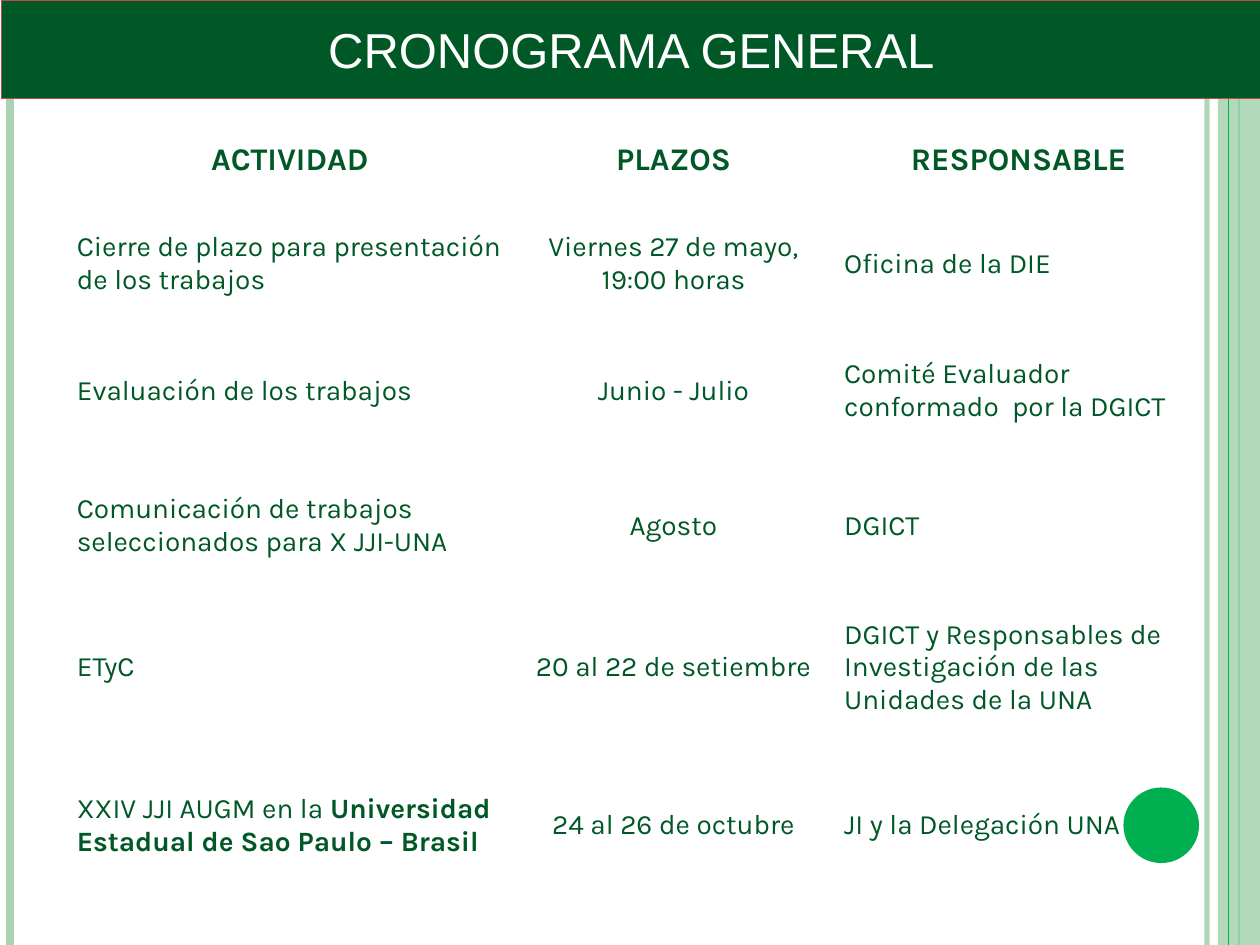
import lxml.etree
import pptx
import pptx.dml.color
import pptx.enum.shapes
import pptx.enum.text
import pptx.oxml.ns
import pptx.util

Pt = pptx.util.Pt
RGBColor = pptx.dml.color.RGBColor
MSO_SHAPE = pptx.enum.shapes.MSO_SHAPE
PP_ALIGN = pptx.enum.text.PP_ALIGN
MIDDLE = pptx.enum.text.MSO_ANCHOR.MIDDLE
qn = pptx.oxml.ns.qn

DARK_GREEN = RGBColor(0x00, 0x58, 0x27)
GREEN = RGBColor(0x00, 0xB0, 0x50)
PALE_GREEN = RGBColor(0xA8, 0xD4, 0xB1)
RED = RGBColor(0xBE, 0x4B, 0x48)
WHITE = RGBColor(0xFF, 0xFF, 0xFF)

WIDTH, HEIGHT = 720, 540
NO_STYLE = "{2D5ABB26-0587-4C30-8999-92F81FD0307C}"

presentation = pptx.Presentation()
presentation.slide_width, presentation.slide_height = Pt(WIDTH), Pt(HEIGHT)
slide = presentation.slides.add_slide(presentation.slide_layouts[6])


def set_alpha(properties, percent):
    color = properties.find(".//" + qn("a:srgbClr"))
    lxml.etree.SubElement(color, qn("a:alpha")).set("val", str(percent * 1000))


def add_plain_shape(kind, left, top, width, height, color):
    shape = slide.shapes.add_shape(kind, Pt(left), Pt(top), Pt(width), Pt(height))
    shape.shadow.inherit = False
    shape.fill.solid()
    shape.fill.fore_color.rgb = color
    shape.line.fill.background()
    return shape


# Vertical rules and side band, from back to front
rules = [(689.8, PALE_GREEN, 3, 93), (5.9, PALE_GREEN, 4.5, 100),
         (708, GREEN, 1.5, 100), (702, GREEN, 0.75, 100)]
for x, color, weight, opacity in rules:
    if x == 702:
        band = add_plain_shape(MSO_SHAPE.RECTANGLE, 696, 0, 24, HEIGHT, PALE_GREEN)
        set_alpha(band._element.spPr, 87)
    rule = slide.shapes.add_connector(
        pptx.enum.shapes.MSO_CONNECTOR.STRAIGHT, Pt(x), Pt(0), Pt(x), Pt(HEIGHT))
    rule.line.color.rgb = color
    rule.line.width = Pt(weight)
    properties = rule._element.spPr
    lxml.etree.SubElement(properties, qn("a:effectLst"))
    if opacity < 100:
        set_alpha(properties, opacity)

# Green disc
add_plain_shape(MSO_SHAPE.OVAL, 642, 450, 43.2, 43.2, GREEN)

# Title bar
title = add_plain_shape(MSO_SHAPE.RECTANGLE, 0.8, 0, WIDTH, 56.2, DARK_GREEN)
title.line.color.rgb = RED
title.line.width = Pt(0.75)
title.text_frame.text = "CRONOGRAMA GENERAL"
title.text_frame.vertical_anchor = MIDDLE
paragraph = title.text_frame.paragraphs[0]
paragraph.alignment = PP_ALIGN.CENTER
font = paragraph.runs[0].font
font.name, font.size = "Arial", Pt(28)
font.color.rgb = WHITE

# Schedule table
rows = [
    ("ACTIVIDAD", "PLAZOS", "RESPONSABLE"),
    ("Cierre de plazo para presentación de los trabajos",
     "Viernes 27 de mayo,\n19:00 horas", "Oficina de la DIE"),
    ("Evaluación de los trabajos", "Junio - Julio",
     "Comité Evaluador conformado  por la DGICT"),
    ("Comunicación de trabajos seleccionados para X JJI-UNA", "Agosto", "DGICT"),
    ("ETyC", "20 al 22 de setiembre",
     "DGICT y Responsables de Investigación de las Unidades de la UNA"),
    ("XXIV JJI AUGM en la ", "24 al 26 de octubre", "JI y la Delegación UNA"),
]
column_widths = [257.8, 180.7, 213.8]
row_heights = [50.4, 68.4, 77, 77, 85, 95.8]
table = slide.shapes.add_table(
    len(rows), len(column_widths), Pt(36.7), Pt(66.2),
    Pt(sum(column_widths)), Pt(sum(row_heights))).table
table.first_row = table.horz_banding = False
table._tbl.tblPr.find(qn("a:tableStyleId")).text = NO_STYLE
for column, width in zip(table.columns, column_widths):
    column.width = Pt(width)
for row, height in zip(table.rows, row_heights):
    row.height = Pt(height)

for row_index, texts in enumerate(rows):
    is_header = row_index == 0
    for column_index, text in enumerate(texts):
        cell = table.cell(row_index, column_index)
        cell.fill.background()
        cell.vertical_anchor = MIDDLE
        cell.text_frame.text = text
        centred = is_header or column_index == 1
        for paragraph in cell.text_frame.paragraphs:
            paragraph.alignment = PP_ALIGN.CENTER if centred else PP_ALIGN.LEFT
            if text == "XXIV JJI AUGM en la ":
                paragraph.add_run().text = "Universidad Estadual de Sao Paulo – Brasil"
            for run_index, run in enumerate(paragraph.runs):
                run.font.name = "Karla"
                run.font.size = Pt(18 if is_header else 16)
                run.font.bold = is_header or run_index == 1
                run.font.color.rgb = DARK_GREEN

presentation.save("out.pptx")
